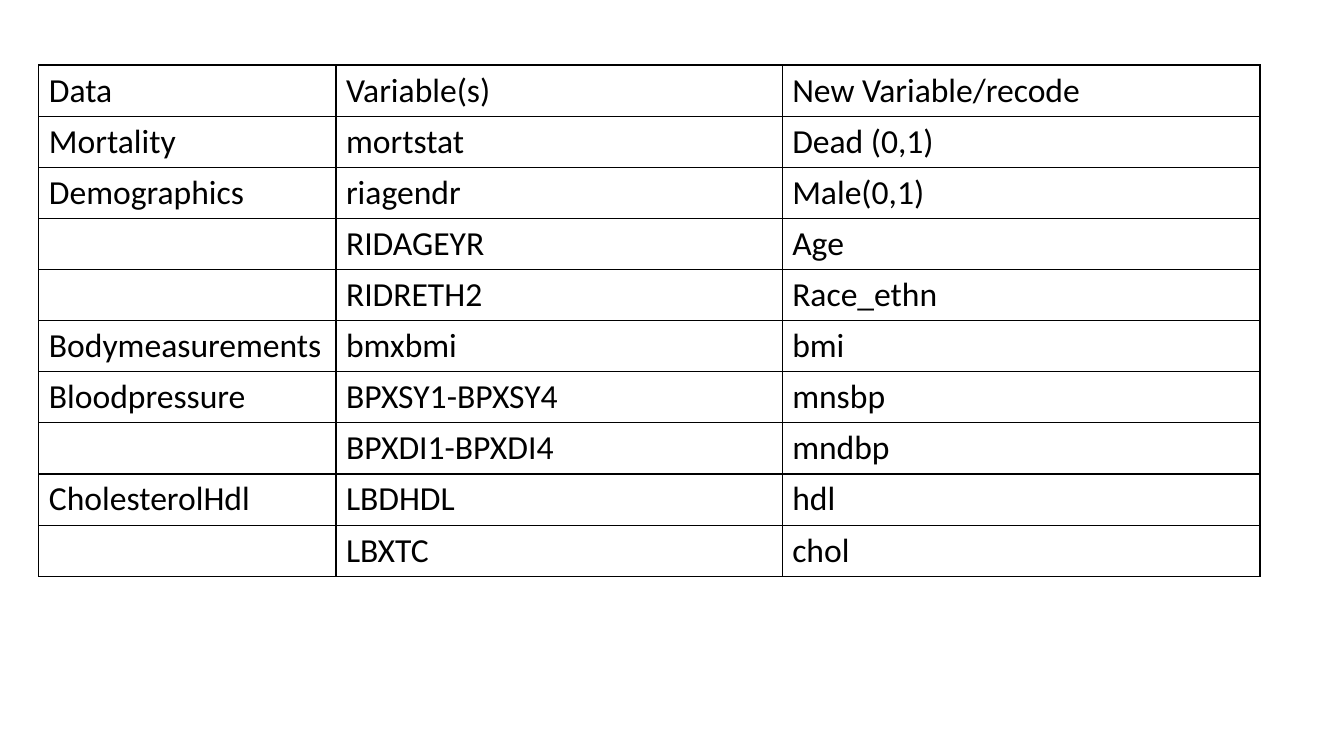
from lxml import etree
from pptx import Presentation
from pptx.dml.color import RGBColor
from pptx.oxml.ns import qn
from pptx.util import Emu, Pt

PX = 9525
BLANK = 6
FONT = "Calibri"
COLORS = {"ink": "000000"}
SIDES = ("a:lnL", "a:lnR", "a:lnT", "a:lnB")
WIDTHS = (283, 425, 455)
HEIGHT = 48
ROWS = (
    ("Data", "Variable(s)", "New Variable/recode"),
    ("Mortality", "mortstat", "Dead (0,1)"),
    ("Demographics", "riagendr", "Male(0,1)"),
    ("", "RIDAGEYR", "Age"),
    ("", "RIDRETH2", "Race_ethn"),
    ("Bodymeasurements", "bmxbmi", "bmi"),
    ("Bloodpressure", "BPXSY1-BPXSY4", "mnsbp"),
    ("", "BPXDI1-BPXDI4", "mndbp"),
    ("CholesterolHdl", "LBDHDL", "hdl"),
    ("", "LBXTC", "chol"),
)


def px(count):
    """Turn pixels into EMU."""
    return Emu(count * PX)


def add_run(cell, text):
    """Write one run of text in a cell."""
    run = cell.text_frame.paragraphs[0].add_run()
    run.text = text
    run.font.name = FONT
    run.font.size = Pt(24)
    run.font.color.rgb = RGBColor.from_string(COLORS["ink"])


def add_border(cell):
    """Draw a thin line on each side of a cell."""
    props = cell._tc.get_or_add_tcPr()
    for side in SIDES:
        line = etree.SubElement(props, qn(side), w=str(Pt(1)))
        fill = etree.SubElement(line, qn("a:solidFill"))
        etree.SubElement(fill, qn("a:srgbClr"), val=COLORS["ink"])


def add_grid(slide, left, top):
    """Place the table of variables and their recodes."""
    frame = slide.shapes.add_table(
        len(ROWS), len(WIDTHS), px(left), px(top),
        px(sum(WIDTHS)), px(HEIGHT * len(ROWS)))
    table = frame.table
    table.first_row = table.horz_banding = False
    for column, width in zip(table.columns, WIDTHS):
        column.width = px(width)
    for row, texts in zip(table.rows, ROWS):
        row.height = px(HEIGHT)
        for cell, text in zip(row.cells, texts):
            add_border(cell)
            cell.fill.background()
            if text:
                add_run(cell, text)


def main():
    """Build and save the slide."""
    deck = Presentation()
    deck.slide_width, deck.slide_height = px(1280), px(720)
    slide = deck.slides.add_slide(deck.slide_layouts[BLANK])
    add_grid(slide, 37, 62)
    deck.save("out.pptx")


if __name__ == "__main__":
    main()
